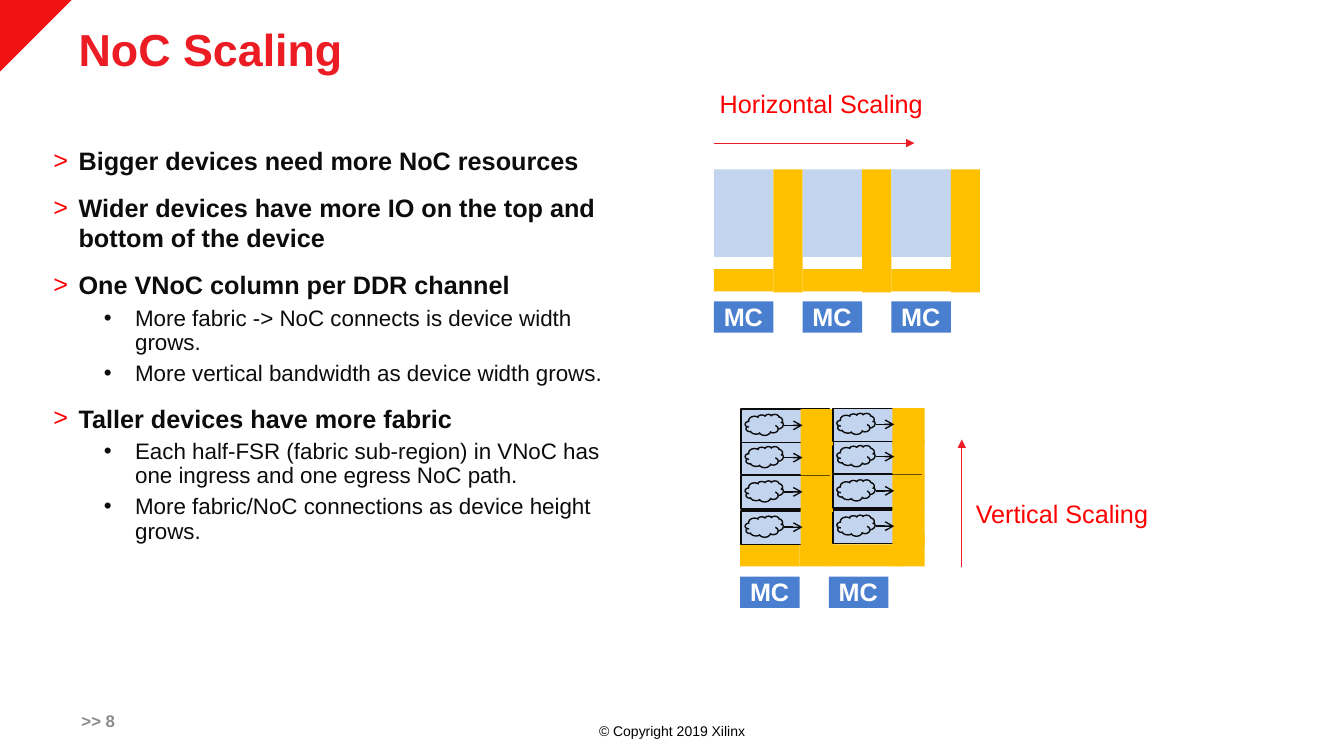
from itertools import product
from typing import NamedTuple, Optional

from lxml.etree import SubElement
from pptx import Presentation
from pptx.dml.color import RGBColor
from pptx.enum.shapes import MSO_CONNECTOR as Connector, MSO_SHAPE as Preset
from pptx.enum.text import MSO_ANCHOR as Anchor, MSO_AUTO_SIZE as AutoSize, PP_ALIGN as Align
from pptx.oxml.ns import qn
from pptx.util import Emu, Pt

PX = 9144
FONT = "Arial"
RED, ARROW_RED, TITLE_RED, CORNER_RED = "FF0000", "EB1C23", "EC1C24", "F11212"
INK, BLACK, WHITE, GREY = "0C0C0C", "000000", "FFFFFF", "8C8C8C"
GOLD, FABRIC, CONTROLLER = "FFC000", "C3D4EF", "4A7ECF"


class Box(NamedTuple):
    left: int
    top: int
    width: int
    height: int


class Label(NamedTuple):
    text: str
    box: Box
    size: int
    color: str
    bold: bool = False
    align: Align = Align.LEFT
    anchor: Anchor = Anchor.TOP
    wrap: bool = False


class Level(NamedTuple):
    size: int
    bold: bool
    bullet: str
    bullet_color: str
    margin: int
    hanging: int
    space_before: int
    line_spacing: float


class Bullet(NamedTuple):
    level: int
    text: str


LEVELS = [
    Level(18, True, "˃", RED, 25, 25, 12, 1.0),
    Level(16, False, "•", INK, 81, 31, 5, 0.9),
]
BULLETS = [
    Bullet(0, "Bigger devices need more NoC resources"),
    Bullet(0, "Wider devices have more IO on the top and bottom of the device"),
    Bullet(0, "One VNoC column per DDR channel"),
    Bullet(1, "More fabric -> NoC connects is device width grows."),
    Bullet(1, "More vertical bandwidth as device width grows."),
    Bullet(0, "Taller devices have more fabric"),
    Bullet(1, "Each half-FSR (fabric sub-region) in VNoC has one ingress and one egress NoC path."),
    Bullet(1, "More fabric/NoC connections as device height grows."),
]
LABELS = [
    Label("© Copyright 2019 Xilinx", Box(0, 712, 1333, 27), 10, BLACK, align=Align.CENTER, wrap=True),
    Label(">> 8", Box(71, 695, 99, 40), 12, GREY, bold=True, anchor=Anchor.MIDDLE, wrap=True),
    Label("Horizontal Scaling", Box(704, 83, 224, 40), 18, RED),
    Label("Vertical Scaling", Box(958, 489, 193, 40), 18, RED),
]
COLUMN_PITCH = 88
CELL_PITCH = 91
CELL_TOPS = [507, 438, 472, 406]


def px(length: int) -> Emu:
    return Emu(length * PX)


def rgb(color: str) -> RGBColor:
    return RGBColor.from_string(color)


def place(shape, box: Box) -> None:
    shape.left, shape.top, shape.width, shape.height = map(px, box)


def set_font(paragraph, size: int, color: str, bold: bool) -> None:
    font = paragraph.font
    font.name, font.size, font.bold = FONT, Pt(size), bold
    font.color.rgb = rgb(color)


def add_shape(shapes, box: Box, fill: Optional[str] = None, line: Optional[str] = None,
              preset: Preset = Preset.RECTANGLE) -> None:
    shape = shapes.add_shape(preset, *map(px, box))
    shape.shadow.inherit = False
    if fill:
        shape.fill.solid()
        shape.fill.fore_color.rgb = rgb(fill)
    else:
        shape.fill.background()
    if line:
        shape.line.color.rgb = rgb(line)
        shape.line.width = Pt(1)
    else:
        shape.line.fill.background()


def add_arrow(shapes, start: tuple[int, int], end: tuple[int, int],
              color: str, width: float, head: str) -> None:
    arrow = shapes.add_connector(Connector.STRAIGHT, *map(px, start + end))
    arrow.line.color.rgb = rgb(color)
    arrow.line.width = Pt(width)
    properties = arrow.element.spPr
    SubElement(properties.find(qn("a:ln")), qn("a:tailEnd"), type=head)
    SubElement(properties, qn("a:effectLst"))


def add_label(shapes, label: Label) -> None:
    frame = shapes.add_textbox(*map(px, label.box)).text_frame
    frame.word_wrap = label.wrap
    frame.vertical_anchor = label.anchor
    paragraph = frame.paragraphs[0]
    paragraph.text = label.text
    paragraph.alignment = label.align
    set_font(paragraph, label.size, label.color, label.bold)


def add_corner(shapes) -> None:
    builder = shapes.build_freeform(px(71), 0)
    builder.add_line_segments([(0, 0), (0, px(71))])
    corner = builder.convert_to_shape()
    corner.shadow.inherit = False
    corner.fill.solid()
    corner.fill.fore_color.rgb = rgb(CORNER_RED)
    corner.line.fill.background()


def fill_title(title) -> None:
    place(title, Box(68, 23, 1153, 55))
    frame = title.text_frame
    frame.text = "NoC Scaling"
    frame.auto_size = AutoSize.NONE
    frame.vertical_anchor = Anchor.TOP
    paragraph = frame.paragraphs[0]
    paragraph.alignment = Align.LEFT
    paragraph.line_spacing = 0.9
    set_font(paragraph, 32, TITLE_RED, True)


def fill_body(body) -> None:
    place(body, Box(43, 139, 567, 529))
    frame = body.text_frame
    frame.text = "\n".join(bullet.text for bullet in BULLETS)
    frame.auto_size = AutoSize.NONE
    for index, (paragraph, bullet) in enumerate(zip(frame.paragraphs, BULLETS)):
        level = LEVELS[bullet.level]
        paragraph.level = bullet.level
        paragraph.line_spacing = level.line_spacing
        paragraph.space_before = Pt(level.space_before if index else 0)
        properties = paragraph._p.get_or_add_pPr()
        properties.set("marL", str(px(level.margin)))
        properties.set("indent", str(px(-level.hanging)))
        SubElement(SubElement(properties, qn("a:buClr")), qn("a:srgbClr"), val=level.bullet_color)
        SubElement(properties, qn("a:buFont"), typeface=FONT)
        SubElement(properties, qn("a:buChar"), char=level.bullet)
        set_font(paragraph, level.size, INK, level.bold)


def add_controller(shapes, left: int, top: int, base_width: int = 59) -> None:
    add_shape(shapes, Box(left, top, 59, 31), CONTROLLER)
    add_label(shapes, Label("MC", Box(left, top - 5, 59, 40), 18, WHITE, bold=True))
    add_shape(shapes, Box(left, top - 32, base_width, 22), GOLD)


def add_fabric_cell(shapes, left: int, top: int) -> None:
    add_shape(shapes, Box(left, top, 88, 33), FABRIC, INK)
    add_shape(shapes, Box(left + 4, top + 5, 38, 21), line=INK, preset=Preset.CLOUD)
    add_shape(shapes, Box(left + 59, top, 32, 36), GOLD)
    add_arrow(shapes, (left + 43, top + 16), (left + 61, top + 16), INK, 1, "arrow")


def main() -> None:
    """Build the NoC scaling slide."""
    presentation = Presentation()
    presentation.slide_width, presentation.slide_height = px(1333), px(750)
    slide = presentation.slides.add_slide(presentation.slide_layouts[1])
    shapes = slide.shapes
    add_corner(shapes)
    fill_title(shapes.title)
    fill_body(slide.placeholders[1])
    for column in range(3):
        left = 708 + column * COLUMN_PITCH
        add_controller(shapes, left, 299)
        add_shape(shapes, Box(left, 168, 59, 87), FABRIC)
        add_shape(shapes, Box(left + 59, 168, 29, 122), GOLD)
    for column, base_width in enumerate((59, 68)):
        add_controller(shapes, 734 + column * COLUMN_PITCH, 572, base_width)
    for left in (793, 888):
        add_shape(shapes, Box(left, 529, 29, 33), GOLD)
    for top, column in product(CELL_TOPS, range(2)):
        add_fabric_cell(shapes, 735 + column * CELL_PITCH, top - column)
    add_arrow(shapes, (708, 142), (907, 142), ARROW_RED, 0.5, "triangle")
    add_arrow(shapes, (954, 563), (954, 436), ARROW_RED, 0.5, "triangle")
    for label in LABELS:
        add_label(shapes, label)
    presentation.save("out.pptx")


if __name__ == "__main__":
    main()
